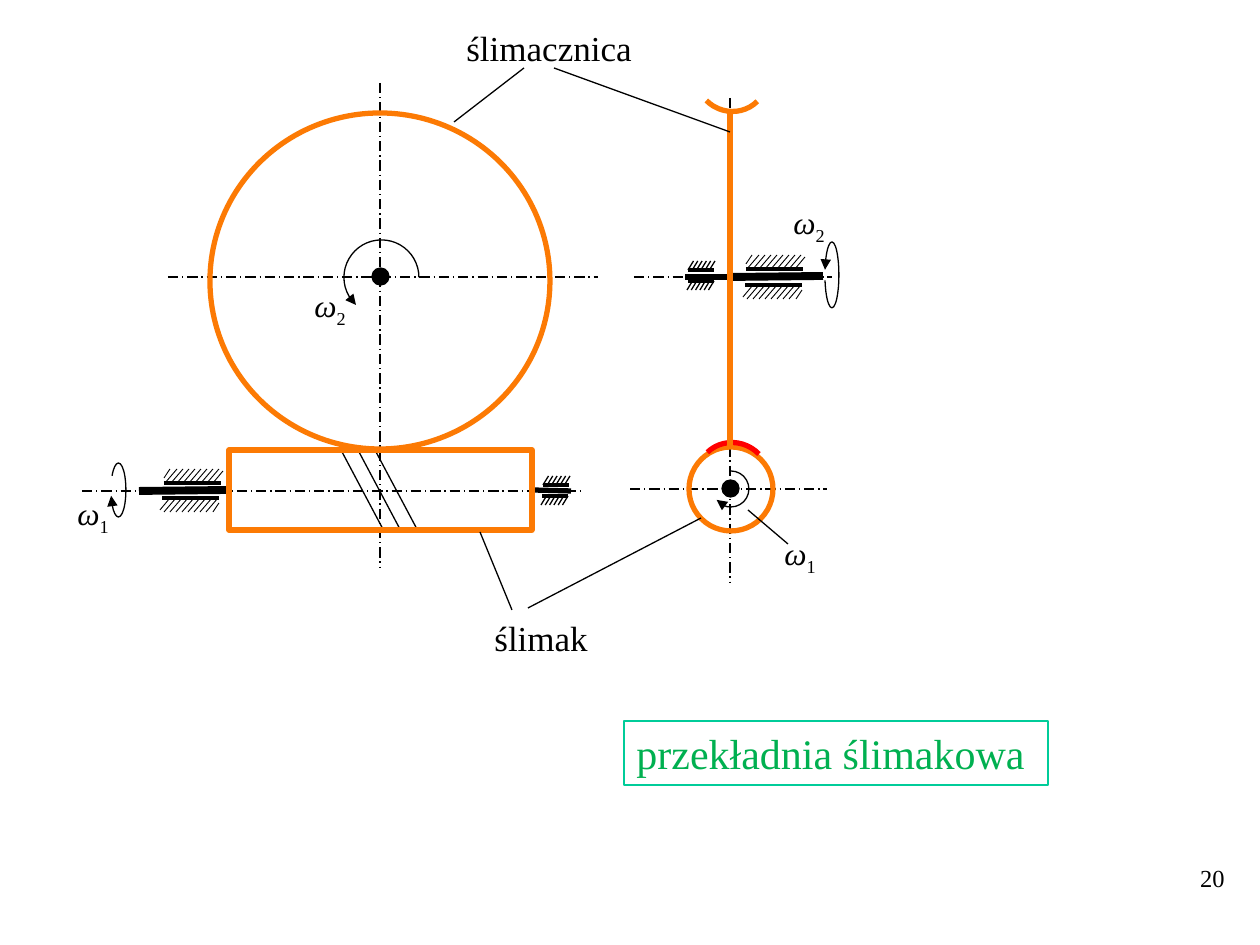
from dataclasses import dataclass

from lxml.etree import SubElement
from pptx import Presentation
from pptx.dml.color import RGBColor
from pptx.enum.dml import MSO_LINE
from pptx.enum.shapes import MSO_CONNECTOR, MSO_SHAPE
from pptx.enum.text import MSO_ANCHOR, PP_ALIGN
from pptx.oxml.ns import qn
from pptx.util import Emu, Inches, Pt

SCALE = 914400 / 126
FONT = "Times New Roman"
HEX = {"black": "000000", "orange": "FC7A04", "red": "FF0000",
       "white": "FFFFFF", "teal": "00CC99", "green": "00B050"}


@dataclass
class Line:
    x1: int
    y1: int
    x2: int
    y2: int
    width: float = 0.75
    color: str = "black"
    dash: bool = False


@dataclass
class Shape:
    kind: MSO_SHAPE
    x: int
    y: int
    w: int
    h: int
    color: str = "black"
    width: float = 0.75
    fill: str = ""


@dataclass
class Arc:
    """Arc from start to end in degrees; arrow names the tipped end."""
    x: int
    y: int
    w: int
    h: int
    start: float
    end: float
    arrow: str = ""
    turn: float = 0
    color: str = "black"
    width: float = 0.75


@dataclass
class Text:
    x: int
    y: int
    w: int
    h: int
    text: str
    size: int = 20
    sub: str = ""
    align: PP_ALIGN = PP_ALIGN.LEFT


@dataclass
class Rail:
    """Bearing rail; side 1 runs right and hatches up, -1 is its half turn."""
    x: int
    y: int
    side: int
    large: bool


def px(n: float) -> Emu:
    return Emu(round(n * SCALE))


def rgb(name: str) -> RGBColor:
    return RGBColor.from_string(HEX[name])


def stroke(item, color: str, width: float) -> None:
    item.line.color.rgb = rgb(color)
    item.line.width = Pt(width)


def draw_line(slide, ln: Line):
    item = slide.shapes.add_connector(
        MSO_CONNECTOR.STRAIGHT, px(ln.x1), px(ln.y1), px(ln.x2), px(ln.y2))
    stroke(item, ln.color, ln.width)
    if ln.dash:
        item.line.dash_style = MSO_LINE.LONG_DASH_DOT
    SubElement(item._element.spPr, qn("a:effectLst"))
    return item


def draw_shape(slide, s: Shape):
    item = slide.shapes.add_shape(s.kind, px(s.x), px(s.y), px(s.w), px(s.h))
    item.shadow.inherit = False
    stroke(item, s.color, s.width)
    if s.fill:
        item.fill.solid()
        item.fill.fore_color.rgb = rgb(s.fill)
    else:
        item.fill.background()
    return item


def draw_arc(slide, a: Arc) -> None:
    item = draw_shape(slide, Shape(MSO_SHAPE.ARC, a.x, a.y, a.w, a.h, a.color, a.width))
    item.rotation = a.turn
    for i, angle in enumerate((a.start, a.end)):
        item.adjustments[i] = angle * 0.6
    if a.arrow:
        SubElement(item._element.spPr.find(qn("a:ln")), qn(f"a:{a.arrow}End"), type="triangle")


def add_run(para, text: str, size: int, color: str = "black"):
    run = para.add_run()
    run.text = text
    run.font.name = FONT
    run.font.size = Pt(size)
    run.font.color.rgb = rgb(color)
    return run


def draw_text(slide, t: Text) -> None:
    frame = slide.shapes.add_textbox(px(t.x), px(t.y), px(t.w), px(t.h)).text_frame
    frame.word_wrap = True
    para = frame.paragraphs[0]
    para.alignment = t.align
    run = add_run(para, t.text, t.size)
    if t.sub:
        run.font.italic = True
        low = add_run(para, t.sub, t.size)
        low._r.get_or_add_rPr().set("baseline", "-25000")


def draw_rail(slide, r: Rail) -> None:
    def stroke_at(x1, y1, x2, y2, width):
        draw_line(slide, Line(r.x + r.side * x1, r.y - r.side * y1,
                              r.x + r.side * x2, r.y - r.side * y2, width))

    if r.large:
        stroke_at(0, 0, 57, 0, 2.25)
        stroke_at(0, 5, 6, 14, 0.5)
        for i in range(8):
            stroke_at(1 + 6 * i, 0, 13 + 6 * i, 14, 0.5)
        stroke_at(49, 0, 59, 12, 0.5)
    else:
        stroke_at(0, 0, 26, 0, 2.25)
        for i in range(6):
            stroke_at(4.3 * i, 0, 4.3 * i + 5.5, 9, 0.75)


AXES = [Line(82, 491, 580, 491, dash=True), Line(380, 83, 380, 568, dash=True),
        Line(168, 277, 598, 277, dash=True), Line(630, 489, 827, 489, dash=True),
        Line(730, 98, 730, 583, dash=True), Line(634, 277, 832, 277, dash=True)]
THREADS = [Line(x, 450, x + 43, 531) for x in (341, 358, 375)]
WHEELS = [Shape(MSO_SHAPE.OVAL, 210, 113, 340, 336, "orange", 3),
          Shape(MSO_SHAPE.OVAL, 689, 447, 84, 84, "orange", 3)]
HUBS = [Shape(MSO_SHAPE.OVAL, x, y, 17, 17, fill="black")
        for x, y in ((372, 268), (722, 480))]
WORM = Shape(MSO_SHAPE.RECTANGLE, 229, 450, 303, 80, "orange", 3)
RIMS = [Arc(696, 39, 71, 73, 270, 0, turn=135.1, color="orange", width=3),
        Arc(697, 442, 72, 74, 270, 0, turn=316.2, color="red", width=3)]
SIDE = [Line(732, 277, 823, 276, 4.5), Line(731, 277, 685, 277, 3),
        Line(730, 109, 730, 448, 3, "orange")]
RAILS = [Rail(543, 485, 1, False), Rail(568, 496, -1, False),
         Rail(688, 270, 1, False), Rail(714, 281, -1, False),
         Rail(164, 483, 1, True), Rail(219, 498, -1, True),
         Rail(746, 269, 1, True), Rail(802, 285, -1, True)]
TURNS = [Arc(111, 463, 15, 54, 245.85, 141.66, "tail"),
         Arc(344, 240, 75, 75, 132.77, 0, "head"),
         Arc(825, 242, 14, 66, 216.52, 141.66, "head"),
         Arc(713, 471, 36, 36, 270, 142.65, "tail")]
LEADS = [Line(788, 544, 748, 510), Line(480, 532, 512, 610), Line(528, 608, 701, 518),
         Line(524, 68, 454, 122), Line(554, 68, 730, 132)]
TEXTS = [Text(x, y, 64, 50, "ω", 18, sub)
         for x, y, sub in ((65, 488, "1"), (302, 280, "2"), (781, 197, "2"), (772, 528, "1"))]
TEXTS += [Text(482, 610, 188, 55, "ślimak"), Text(454, 20, 200, 55, "ślimacznica"),
          Text(1162, 857, 75, 63, "20", 14, align=PP_ALIGN.RIGHT)]


def draw_caption(slide) -> None:
    box = draw_shape(slide, Shape(MSO_SHAPE.RECTANGLE, 624, 721, 424, 64, "teal", fill="white"))
    frame = box.text_frame
    frame.word_wrap = True
    frame.vertical_anchor = MSO_ANCHOR.TOP
    frame.paragraphs[0].alignment = PP_ALIGN.LEFT
    add_run(frame.paragraphs[0], "przekładnia ślimakowa", 24, "green")


def main() -> None:
    deck = Presentation()
    deck.slide_width, deck.slide_height = Inches(10), Inches(7.5)
    slide = deck.slides.add_slide(deck.slide_layouts[6])

    for ln in AXES:
        draw_line(slide, ln)
    left = draw_line(slide, Line(139, 491, 229, 490, 4.5))
    right = draw_line(slide, Line(532, 490, 571, 491, 3))
    for s in WHEELS + HUBS:
        draw_shape(slide, s)
    for ln in THREADS:
        draw_line(slide, ln)
    worm = draw_shape(slide, WORM)
    left.end_connect(worm, 1)
    right.begin_connect(worm, 3)
    for a in RIMS + TURNS:
        draw_arc(slide, a)
    for ln in SIDE + LEADS:
        draw_line(slide, ln)
    for r in RAILS:
        draw_rail(slide, r)
    for t in TEXTS:
        draw_text(slide, t)
    draw_caption(slide)
    deck.save("out.pptx")


if __name__ == "__main__":
    main()
